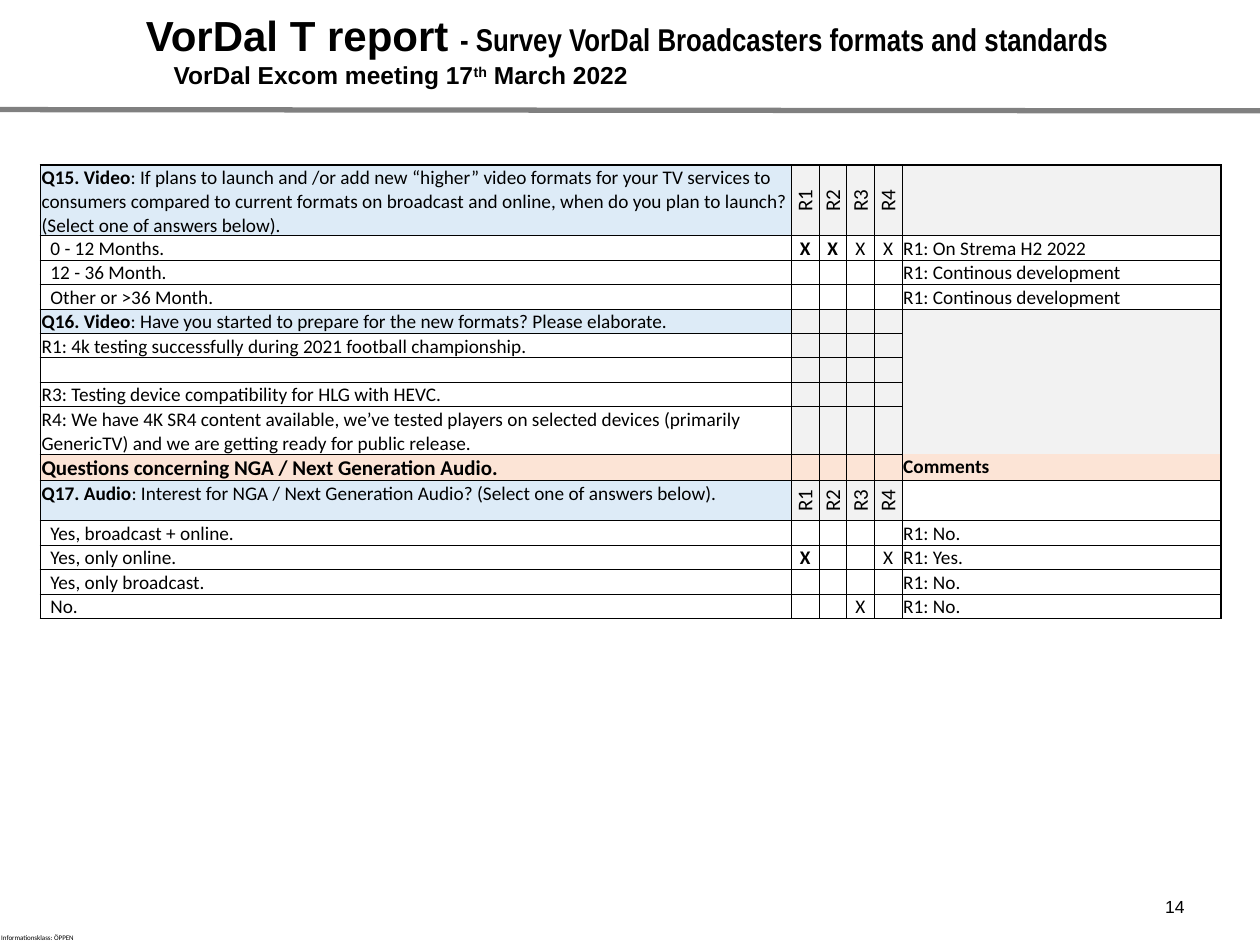
import pptx
import pptx.util
import pptx.dml.color
import pptx.enum.text
import pptx.enum.shapes
import pptx.oxml.ns
import lxml.etree

Inch, Pt = pptx.util.Inches, pptx.util.Pt
Align, Anchor = pptx.enum.text.PP_ALIGN, pptx.enum.text.MSO_ANCHOR
qn = pptx.oxml.ns.qn

HUE = {"ink": "000000", "rule": "808080", "blue": "DDEBF7",
       "grey": "F2F2F2", "peach": "FCE4D6"}
WIDE, HIGH = 10, 7.5
COLS = [5.96] + [0.22] * 4 + [2.53]
LEFT, TOP = 0.32, 1.31
BASE = 0.17

TITLE = [
    (0, [("VorDal T report ", 24, "Arial"),
         ("- Survey VorDal Broadcasters formats and standards", 18, "Arial Narrow")]),
    (0.22, [("VorDal Excom meeting 17", 14, "Arial"), ("th", 14, "Arial"),
            (" March 2022", 14, "Arial")]),
]
NAMES = ["R1", "R2", "R3", "R4"]
NONE = [""] * 4
# kind, height, (bold, plain), marks, comment, comment fill
ROWS = [
    ("ask", 3 * BASE, ("Q15. Video", ": If plans to launch and /or add new “higher” video formats for your TV services to consumers compared to current formats on broadcast and online, when do you plan to launch? (Select one of answers below)."), NAMES, "", "grey"),
    ("pick", BASE, ("", "0 - 12 Months."), ["*X", "*X", "X", "X"], "R1: On Strema H2 2022", None),
    ("pick", BASE, ("", "12 - 36 Month."), NONE, "R1: Continous development", None),
    ("pick", BASE, ("", "Other or >36 Month."), NONE, "R1: Continous development", None),
    ("ask", BASE, ("Q16. Video", ": Have you started to prepare for the new formats? Please elaborate."), NONE, "", "grey"),
    ("note", BASE, ("", "R1: 4k testing successfully during 2021 football championship."), NONE, "", "grey"),
    ("note", BASE, ("", ""), NONE, "", "grey"),
    ("note", BASE, ("", "R3: Testing device compatibility for HLG with HEVC."), NONE, "", "grey"),
    ("note", 2 * BASE, ("", "R4: We have 4K SR4 content available, we’ve tested players on selected devices (primarily GenericTV) and we are getting ready for public release."), NONE, "", "grey"),
    ("head", 0.18, ("Questions concerning NGA / Next Generation Audio.", ""), NONE, "*Comments", "peach"),
    ("ask", 0.32, ("Q17. Audio", ": Interest for NGA / Next Generation Audio? (Select one of answers below)."), NAMES, "", None),
    ("pick", BASE, ("", "Yes, broadcast + online."), NONE, "R1: No.", None),
    ("pick", BASE, ("", "Yes, only online."), ["*X", "", "", "X"], "R1: Yes.", None),
    ("pick", BASE, ("", "Yes, only broadcast."), NONE, "R1: No.", None),
    ("pick", 0.18, ("", "No."), ["", "", "X", ""], "R1: No.", None),
]
FILLS = {"ask": ("blue", "grey"), "note": (None, "grey"),
         "head": ("peach", "peach"), "pick": (None, None)}


def tint(name):
    return pptx.dml.color.RGBColor.from_string(HUE[name])


def style(run, size, face, bold=False):
    run.font.size, run.font.name, run.font.bold = Pt(size), face, bold
    run.font.color.rgb = tint("ink")


def write(par, parts):
    for text, size, face, bold in parts:
        if text:
            run = par.add_run()
            run.text = text
            style(run, size, face, bold)


def label(slide, box, text, size, face, align=Align.LEFT, pad=None):
    frame = slide.shapes.add_textbox(*map(Inch, box)).text_frame
    frame.word_wrap = True
    if pad is not None:
        frame.margin_left = frame.margin_right = Inch(pad)
        frame.margin_top = frame.margin_bottom = Inch(pad)
    par = frame.paragraphs[0]
    par.text, par.alignment = text, align
    style(par.runs[0], size, face)


def edge(cell, sides):
    prop = cell._tc.get_or_add_tcPr()
    for side, width in zip("LRTB", sides):
        line = lxml.etree.SubElement(prop, qn("a:ln" + side), w=str(Pt(width)))
        if width:
            fill = lxml.etree.SubElement(line, qn("a:solidFill"))
            lxml.etree.SubElement(fill, qn("a:srgbClr"), val=HUE["ink"])
        else:
            lxml.etree.SubElement(line, qn("a:noFill"))


def fill_cell(cell, parts, shade, sides, indent=0.01):
    edge(cell, sides)
    if shade:
        cell.fill.solid()
        cell.fill.fore_color.rgb = tint(shade)
    else:
        cell.fill.background()
    cell.margin_left = Inch(indent)
    cell.margin_top = cell.margin_right = Inch(0.01)
    cell.margin_bottom = 0
    par = cell.text_frame.paragraphs[0]
    write(par, parts)
    if not par.runs:
        lxml.etree.SubElement(par._p, qn("a:endParaRPr"), sz="1100")
    return par


def split(text, size):
    return [(text.lstrip("*"), size, "Calibri", text.startswith("*"))]


def grid(slide):
    frame = slide.shapes.add_table(
        len(ROWS), len(COLS), Inch(LEFT), Inch(TOP),
        Inch(sum(COLS)), Inch(sum(row[1] for row in ROWS)))
    table = frame.table
    table.first_row = table.horz_banding = False
    for col, width in zip(table.columns, COLS):
        col.width = Inch(width)
    end = len(ROWS) - 1
    for i, (kind, height, (bold, plain), marks, remark, shade) in enumerate(ROWS):
        table.rows[i].height = Inch(height)
        main, side = FILLS[kind]
        top = 1 if i == 0 else 0.5
        low = 1 if i == end else 0.5
        size = 12 if kind == "head" else 11
        fill_cell(table.cell(i, 0),
                  [(bold, size, "Calibri", True), (plain, size, "Calibri", False)],
                  main, (1, 0.5, top, low), 0.08 if kind == "pick" else 0.01)
        for j, mark in enumerate(marks, 1):
            cell = table.cell(i, j)
            turn = marks is NAMES
            par = fill_cell(cell, split(mark, 12 if turn else 11), side,
                            (0.5, 0.5, top, low))
            par.alignment = Align.CENTER
            if turn:
                cell.vertical_anchor = Anchor.BOTTOM
                cell._tc.get_or_add_tcPr().set("vert", "vert270")
        above = i and ROWS[i - 1][0] in ("ask", "note") and kind in ("note", "head")
        below = i < end and kind in ("ask", "note") and ROWS[i + 1][0] in ("note", "head")
        fill_cell(table.cell(i, 5), split(remark, 11), shade,
                  (0.5, 1, 0 if above else top, 0 if below else low))


def main():
    deck = pptx.Presentation()
    deck.slide_width, deck.slide_height = Inch(WIDE), Inch(HIGH)
    slide = deck.slides.add_slide(deck.slide_layouts[6])
    label(slide, (0.01, 7.41, 1.19, 0.07), "Informationsklass: ÖPPEN", 4, "Calibri", pad=0)

    rule = slide.shapes.add_connector(
        pptx.enum.shapes.MSO_CONNECTOR.STRAIGHT,
        0, Inch(0.87), Inch(WIDE), Inch(0.88))
    rule.line.color.rgb, rule.line.width = tint("rule"), Pt(3)
    lxml.etree.SubElement(rule._element.spPr, qn("a:effectLst"))

    frame = slide.shapes.add_textbox(*map(Inch, (1.06, 0.04, 8.44, 0.71))).text_frame
    frame.word_wrap, frame.vertical_anchor = True, Anchor.MIDDLE
    for i, (indent, parts) in enumerate(TITLE):
        par = frame.add_paragraph() if i else frame.paragraphs[0]
        par._p.get_or_add_pPr().set("marL", str(Inch(indent)))
        write(par, [part + (True,) for part in parts])
    frame.paragraphs[1].runs[1].font._element.set("baseline", "30000")

    label(slide, (7.17, 7.06, 2.33, 0.29), "14", 10, "Arial", Align.RIGHT)
    grid(slide)
    deck.save("out.pptx")


if __name__ == "__main__":
    main()
